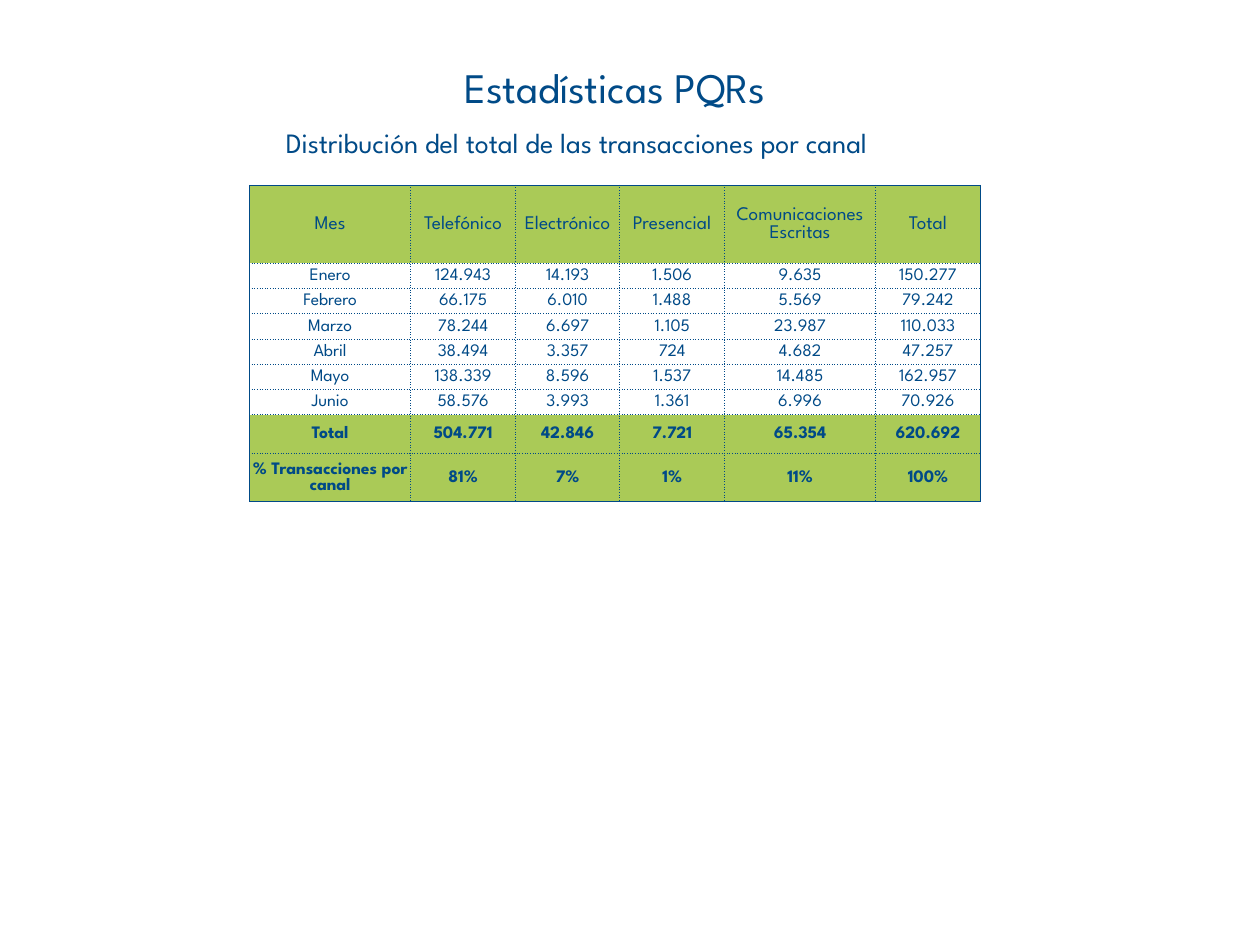
from lxml import etree
from pptx import Presentation
from pptx.dml.color import RGBColor
from pptx.enum.text import MSO_ANCHOR, MSO_AUTO_SIZE, PP_ALIGN
from pptx.oxml.ns import qn
from pptx.util import Inches, Pt

FONT = "League Spartan"
COLORS = {"blue": "004A87", "green": "AACA57"}
TITLE = "Estadísticas PQRs"
SUBTITLE = "Distribución del total de las transacciones por canal"
HEADER = ["Mes", "Telefónico", "Electrónico", "Presencial", "Comunicaciones Escritas", "Total"]
MONTHS = [
    ["Enero", "124.943", "14.193", "1.506", "9.635", "150.277"],
    ["Febrero", "66.175", "6.010", "1.488", "5.569", "79.242"],
    ["Marzo", "78.244", "6.697", "1.105", "23.987", "110.033"],
    ["Abril", "38.494", "3.357", "724", "4.682", "47.257"],
    ["Mayo", "138.339", "8.596", "1.537", "14.485", "162.957"],
    ["Junio", "58.576", "3.993", "1.361", "6.996", "70.926"],
]
SUMMARY = [
    ["Total", "504.771", "42.846", "7.721", "65.354", "620.692"],
    ["% Transacciones por canal", "81%", "7%", "1%", "11%", "100%"],
]
ROWS = [HEADER] + MONTHS + SUMMARY
COLUMN_WIDTHS = [1.28, 0.83, 0.83, 0.83, 1.2, 0.83]
ROW_HEIGHTS = [0.62] + [0.2] * len(MONTHS) + [0.31, 0.38]


def write(frame, text, size, align, bold=False):
    frame.text = text
    paragraph = frame.paragraphs[0]
    paragraph.alignment = align
    font = paragraph.font
    font.name, font.size, font.bold = FONT, Pt(size), bold
    font.color.rgb = RGBColor.from_string(COLORS["blue"])


def add_border(cell, side, dash):
    line = etree.SubElement(cell._tc.get_or_add_tcPr(), qn(f"a:ln{side}"), w=str(Pt(0.5)))
    fill = etree.SubElement(line, qn("a:solidFill"))
    etree.SubElement(fill, qn("a:srgbClr"), val=COLORS["blue"])
    etree.SubElement(line, qn("a:prstDash"), val=dash)


def format_cell(cell, row, column):
    cell.vertical_anchor = MSO_ANCHOR.MIDDLE
    cell.margin_left = cell.margin_right = cell.margin_top = Inches(0.01)
    cell.margin_bottom = 0
    outer_edges = {
        "L": column == 0,
        "R": column == len(HEADER) - 1,
        "T": row == 0,
        "B": row == len(ROWS) - 1,
    }
    for side, outer in outer_edges.items():
        add_border(cell, side, "solid" if outer else "dot")
    if 0 < row <= len(MONTHS):
        cell.fill.background()
    else:
        cell.fill.solid()
        cell.fill.fore_color.rgb = RGBColor.from_string(COLORS["green"])


def add_channel_table(slide):
    table = slide.shapes.add_table(
        len(ROWS), len(HEADER), Inches(1.98), Inches(1.47),
        Inches(sum(COLUMN_WIDTHS)), Inches(sum(ROW_HEIGHTS))).table
    table.first_row = table.horz_banding = False
    for column, width in zip(table.columns, COLUMN_WIDTHS):
        column.width = Inches(width)
    for row, height in zip(table.rows, ROW_HEIGHTS):
        row.height = Inches(height)
    for r, values in enumerate(ROWS):
        for c, value in enumerate(values):
            cell = table.cell(r, c)
            write(cell.text_frame, value, 11 if r == 0 else 10, PP_ALIGN.CENTER, r > len(MONTHS))
            format_cell(cell, r, c)


def main():
    deck = Presentation()
    deck.slide_width, deck.slide_height = Inches(10), Inches(7.5)
    slide = deck.slides.add_slide(deck.slide_layouts[5])

    title = slide.shapes.title
    title.left, title.top, title.width, title.height = map(Inches, (0.38, 0.29, 9, 0.79))
    title.text_frame.vertical_anchor = MSO_ANCHOR.MIDDLE
    write(title.text_frame, TITLE, 24, PP_ALIGN.CENTER)

    subtitle = slide.shapes.add_textbox(*map(Inches, (2.17, 0.95, 5.43, 0.37))).text_frame
    subtitle.word_wrap = True
    subtitle.auto_size = MSO_AUTO_SIZE.SHAPE_TO_FIT_TEXT
    write(subtitle, SUBTITLE, 16, PP_ALIGN.LEFT)

    add_channel_table(slide)
    deck.save("out.pptx")


if __name__ == "__main__":
    main()
